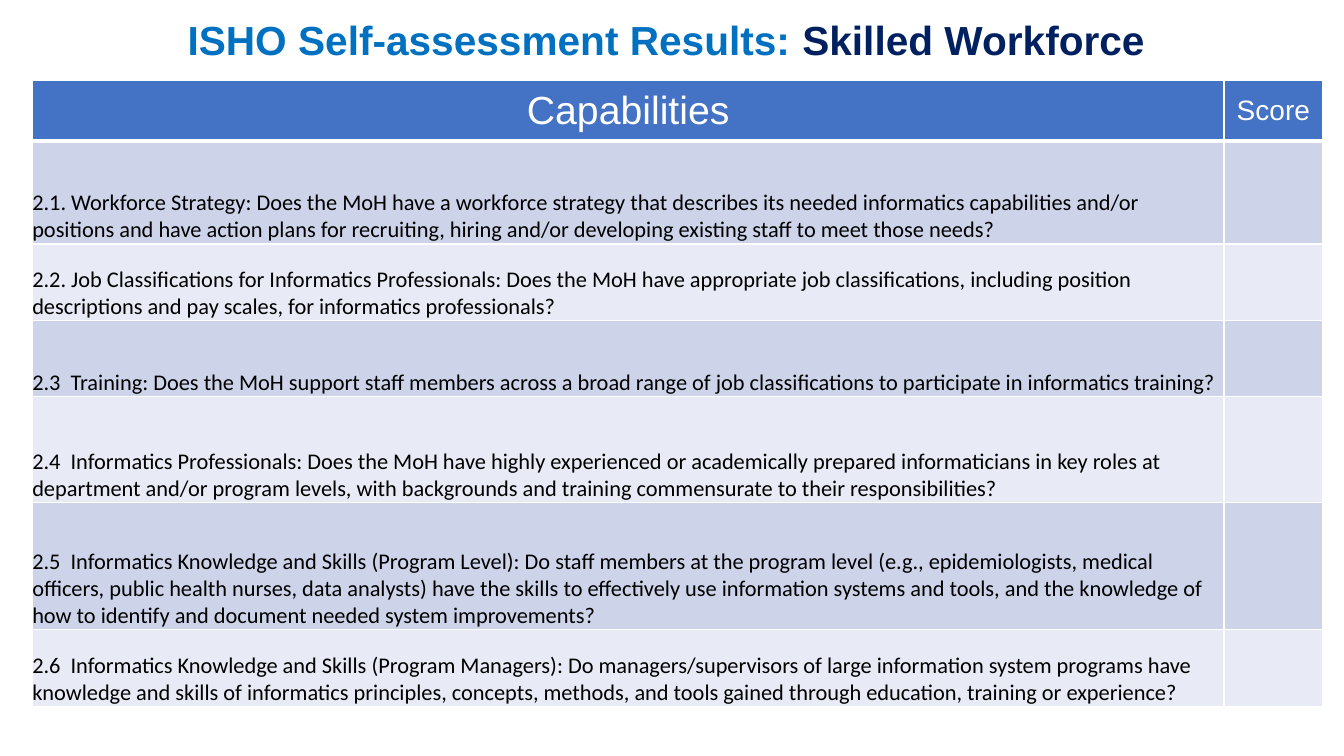
import pptx
import pptx.dml.color
import pptx.enum.text
import pptx.oxml.ns
import pptx.util
from lxml import etree

ALIGN = pptx.enum.text.PP_ALIGN
ANCHOR = pptx.enum.text.MSO_ANCHOR

CAPABILITIES = [
    (13.6, "2.1. Workforce Strategy: Does the MoH have a workforce strategy that describes its needed "
           "informatics capabilities and/or positions and have action plans for recruiting, hiring and/or "
           "developing existing staff to meet those needs?"),
    (10.13, "2.2. Job Classifications for Informatics Professionals: Does the MoH have appropriate job "
            "classifications, including position descriptions and pay scales, for informatics professionals?"),
    (10, "2.3  Training: Does the MoH support staff members across a broad range of job classifications "
         "to participate in informatics training?"),
    (14.13, "2.4  Informatics Professionals: Does the MoH have highly experienced or academically prepared "
            "informaticians in key roles at department and/or program levels, with backgrounds and training "
            "commensurate to their responsibilities?"),
    (16.8, "2.5  Informatics Knowledge and Skills (Program Level): Do staff members at the program level "
           "(e.g., epidemiologists, medical officers, public health nurses, data analysts) have the skills "
           "to effectively use information systems and tools, and the knowledge of how to identify and "
           "document needed system improvements?"),
    (10.13, "2.6  Informatics Knowledge and Skills (Program Managers): Do managers/supervisors of large "
            "information system programs have knowledge and skills of informatics principles, concepts, "
            "methods, and tools gained through education, training or experience?"),
]


def color(code):
    return pptx.dml.color.RGBColor.from_string(code)


class SlideBuilder:
    """Holds the style and the current slide, measured on a grid of 100 columns by 100 rows."""

    heading_font = "Arial"
    body_font = "Calibri"
    header_fill = "4472C4"
    band_fills = ("CDD4EA", "E8EBF5")
    rule_color = "FFFFFF"

    def __init__(self, deck):
        self.deck = deck
        self.page = deck.slides.add_slide(deck.slide_layouts[6])

    def columns(self, count):
        return round(self.deck.slide_width * count / 100)

    def rows(self, count):
        return round(self.deck.slide_height * count / 100)

    def add_span(self, para, text, size, font, code, bold=False):
        span = para.add_run()
        span.text = text
        span.font.size = pptx.util.Pt(size)
        span.font.name = font
        span.font.bold = bold
        span.font.color.rgb = color(code)

    def title(self, height, size, parts):
        box = self.page.shapes.add_textbox(0, 0, self.columns(100), self.rows(height))
        frame = box.text_frame
        frame.word_wrap = True
        frame.vertical_anchor = ANCHOR.MIDDLE
        para = frame.paragraphs[0]
        para.alignment = ALIGN.CENTER
        for text, code in parts:
            self.add_span(para, text, size, self.heading_font, code, True)

    def style_cell(self, cell, fill, bottom_width=1):
        properties = cell._tc.get_or_add_tcPr()
        sides = (("lnL", 1), ("lnR", 1), ("lnT", 1), ("lnB", bottom_width))
        for side, width in sides:
            line = etree.SubElement(properties, pptx.oxml.ns.qn(f"a:{side}"), w=str(pptx.util.Pt(width)))
            solid = etree.SubElement(line, pptx.oxml.ns.qn("a:solidFill"))
            etree.SubElement(solid, pptx.oxml.ns.qn("a:srgbClr"), val=self.rule_color)
        cell.fill.solid()
        cell.fill.fore_color.rgb = color(fill)

    def table(self, left, top, widths, headers, header_height, items):
        heights = [header_height] + [height for height, _ in items]
        frame = self.page.shapes.add_table(
            len(heights), len(widths), self.columns(left), self.rows(top),
            self.columns(sum(widths)), self.rows(sum(heights)))
        table = frame.table
        for column, width in zip(table.columns, widths):
            column.width = self.columns(width)
        for row, height in zip(table.rows, heights):
            row.height = self.rows(height)

        for cell, (text, size) in zip(table.rows[0].cells, headers):
            self.style_cell(cell, self.header_fill, 3)
            cell.vertical_anchor = ANCHOR.MIDDLE
            para = cell.text_frame.paragraphs[0]
            para.alignment = ALIGN.CENTER
            self.add_span(para, text, size, self.heading_font, "FFFFFF")

        for index, (_, text) in enumerate(items):
            question, score = table.rows[index + 1].cells
            for cell in (question, score):
                self.style_cell(cell, self.band_fills[index % 2], 1)
            question.vertical_anchor = ANCHOR.BOTTOM
            question.margin_left = question.margin_right = 0
            question.margin_top = question.margin_bottom = 0
            self.add_span(question.text_frame.paragraphs[0], text, 16, self.body_font, "000000")


def main():
    deck = pptx.Presentation()
    deck.slide_width = pptx.util.Inches(13.33)
    deck.slide_height = pptx.util.Inches(7.5)
    builder = SlideBuilder(deck)
    builder.title(10.27, 29, [("ISHO Self-assessment Results: ", "0070C0"),
                              ("Skilled Workforce ", "002060")])
    builder.table(2.4, 10.67, (88.67, 7.35), (("Capabilities", 28), ("Score", 20)), 8, CAPABILITIES)
    deck.save("out.pptx")


if __name__ == "__main__":
    main()
